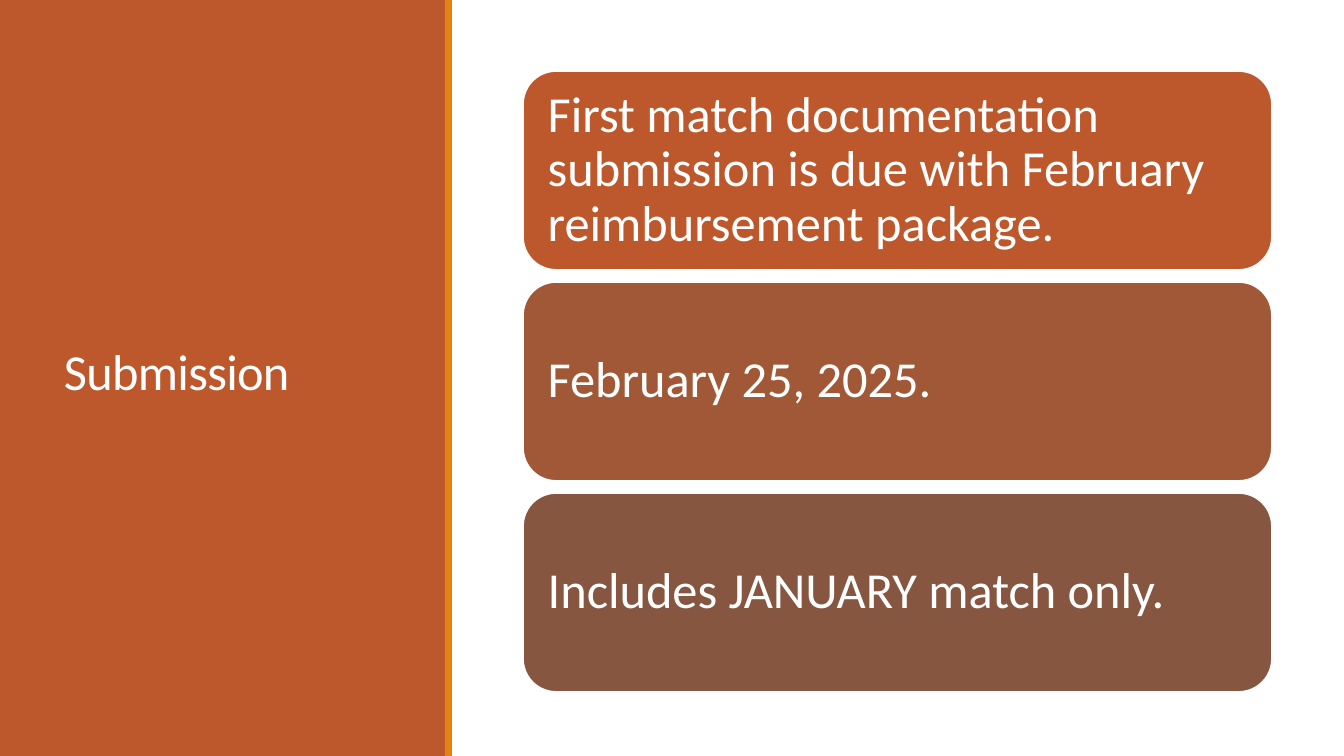
"""Build the match documentation submission slide."""
from pptx import Presentation, util as u
from pptx.dml.color import RGBColor
from pptx.enum import shapes, text

PX = 914400 / 100.8
WHITE = RGBColor(0xFF, 0xFF, 0xFF)
RUST = RGBColor(0xBD, 0x58, 0x2C)
AMBER = RGBColor(0xE4, 0x83, 0x12)
CLAY = RGBColor(0xA0, 0x58, 0x37)
BROWN = RGBColor(0x86, 0x56, 0x40)


def add_box(kind, color, *area):
    box = slide.shapes.add_shape(kind, *(round(n * PX) for n in area))
    box.shadow.inherit = False
    box.fill.solid()
    box.fill.fore_color.rgb = color
    box.line.fill.background()
    return box


def set_text(box, words, lead):
    frame = box.text_frame
    frame.word_wrap = True
    frame.vertical_anchor = text.MSO_ANCHOR.MIDDLE
    para = frame.paragraphs[0]
    para.text = words
    para.alignment = text.PP_ALIGN.LEFT
    para.line_spacing = lead
    para.font.name = "Calibri"
    para.font.size = u.Pt(36)
    para.font.color.rgb = WHITE
    return frame


deck = Presentation()
deck.slide_width = round(1344 * PX)
deck.slide_height = round(756 * PX)
slide = deck.slides.add_slide(deck.slide_layouts[6])

add_box(shapes.MSO_SHAPE.RECTANGLE, RUST, 0, 0, 446, 756)
title = slide.shapes.add_textbox(*(round(n * PX) for n in (54, 57, 340, 636)))
frame = set_text(title, "Submission", 0.85)
frame.paragraphs[0].runs[0].font._element.set("spc", "-50")
add_box(shapes.MSO_SHAPE.RECTANGLE, AMBER, 445, 0, 7, 756)

cards = [
    ("First match documentation submission is due with February reimbursement package.", RUST),
    ("February 25, 2025.", CLAY),
    ("Includes JANUARY match only.", BROWN),
]
for row, (words, color) in enumerate(cards):
    card = add_box(shapes.MSO_SHAPE.ROUNDED_RECTANGLE, color, 523, 71 + 211 * row, 749, 199)
    card.line.color.rgb = WHITE
    card.line.width = u.Pt(1.25)
    frame = set_text(card, words, 0.9)
    frame.margin_left = frame.margin_right = round(15 * PX)
    frame.margin_top = frame.margin_bottom = round(15 * PX)

deck.save("out.pptx")
